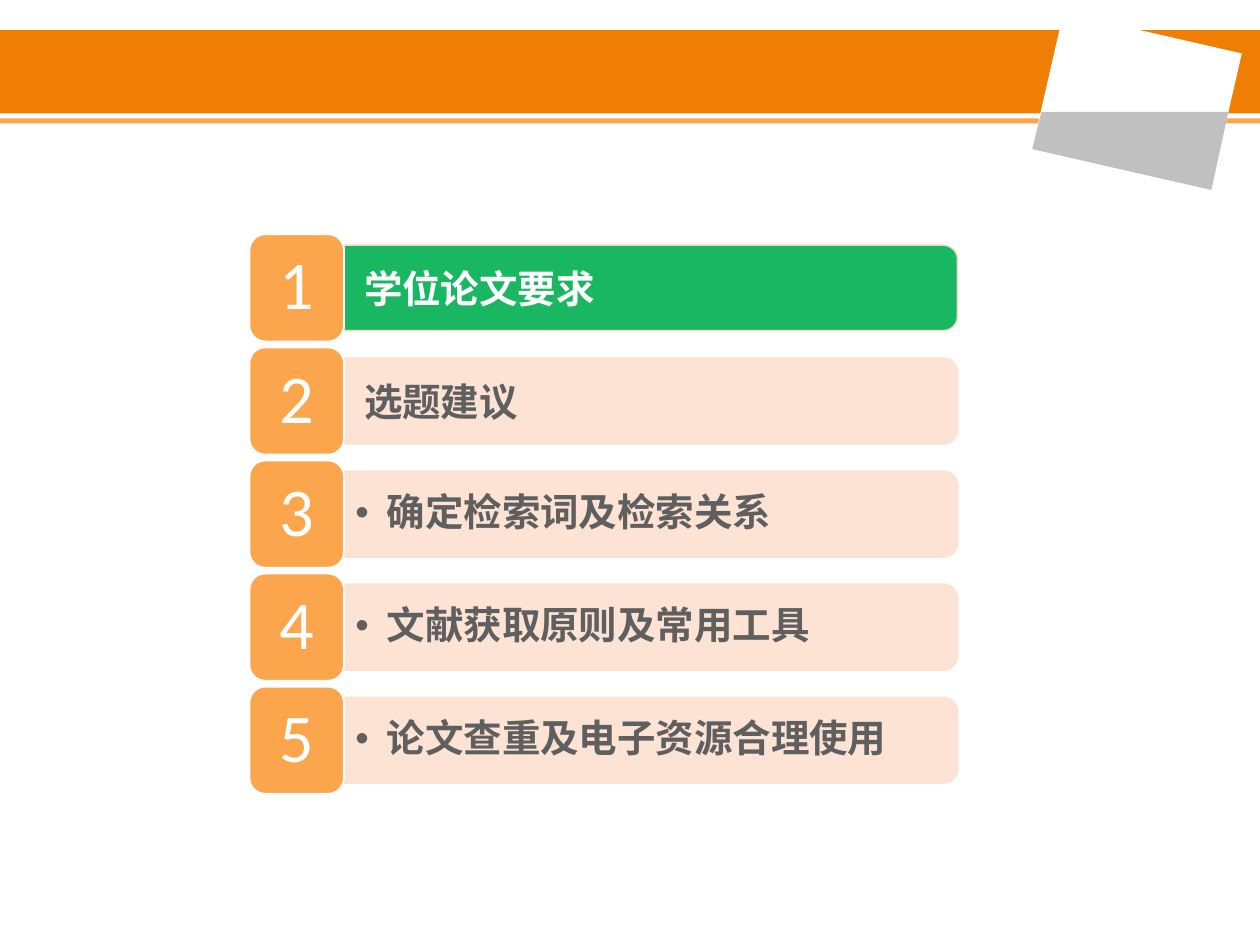
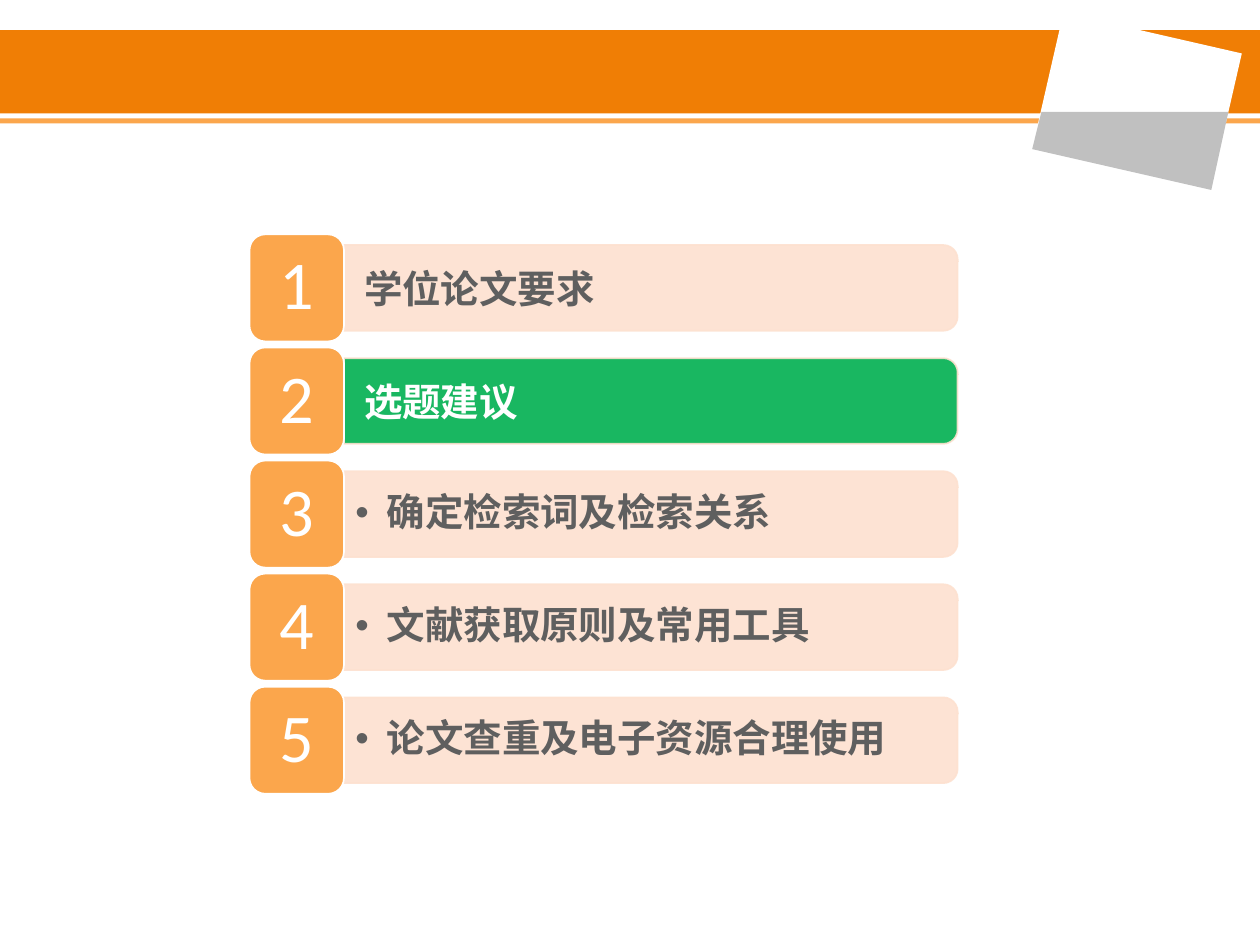
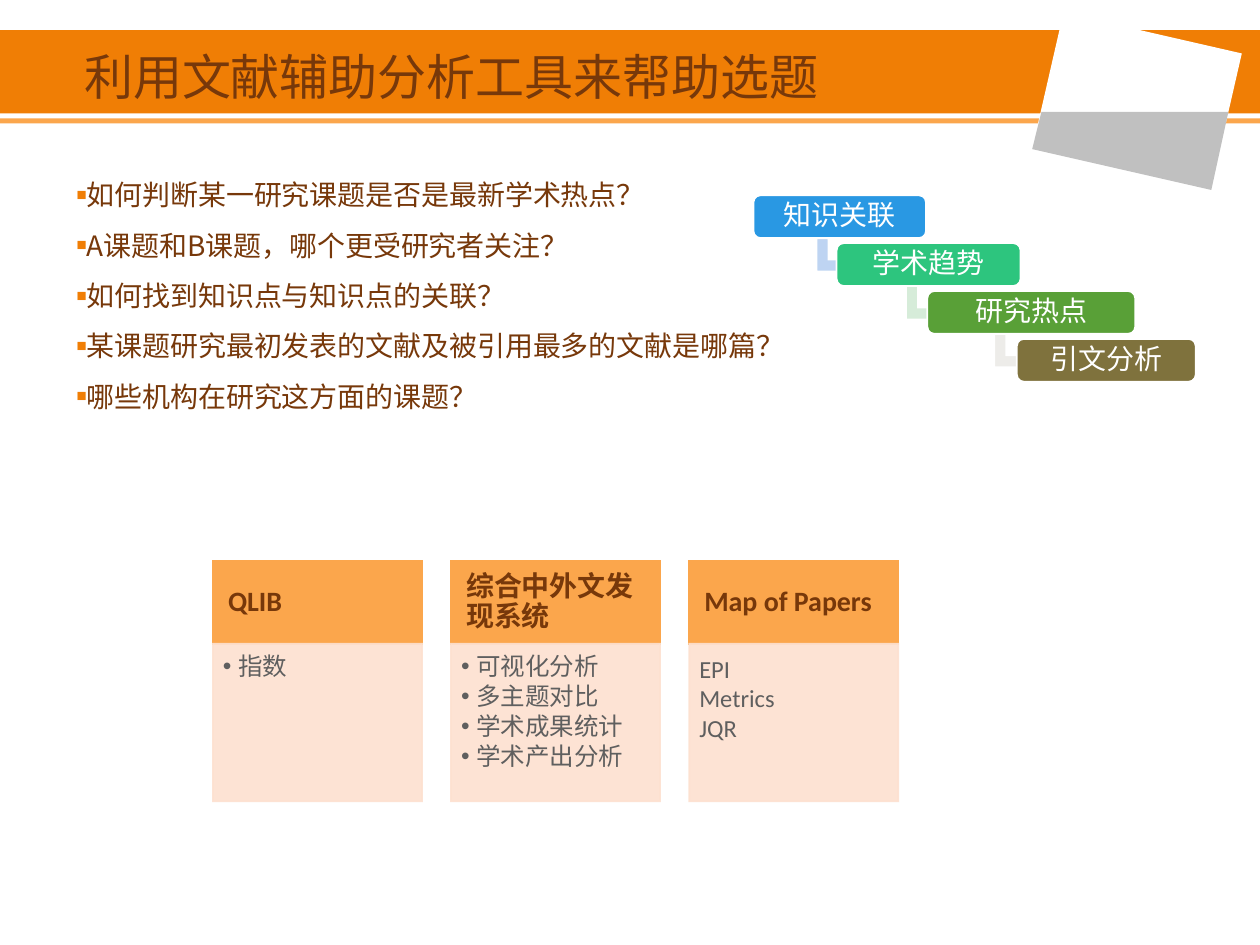
import pptx
import pptx.util
import pptx.dml.color
import pptx.enum.shapes
import pptx.enum.text
import pptx.oxml.ns
from lxml import etree

Inches = pptx.util.Inches
Pt = pptx.util.Pt
Shape = pptx.enum.shapes.MSO_SHAPE
Anchor = pptx.enum.text.MSO_ANCHOR
Align = pptx.enum.text.PP_ALIGN
qn = pptx.oxml.ns.qn

ORANGE = "F07E05"
LIGHT_ORANGE = "FBA64C"
PEACH = "FDE1D0"
GREEN = "00B050"
BROWN = "77380A"
GREY = "5F5F5F"
SILVER = "C0C0C0"
WHITE = "FFFFFF"
SANS = "Calibri"
CJK = "Noto Sans CJK SC"
SERIF = "Times New Roman"

TOPICS = ["学位论文要求", "选题建议", "确定检索词及检索关系",
          "文献获取原则及常用工具", "论文查重及电子资源合理使用"]
QUESTIONS = ["如何判断某一研究课题是否是最新学术热点？",
             "A课题和B课题，哪个更受研究者关注？",
             "如何找到知识点与知识点的关联？",
             "某课题研究最初发表的文献及被引用最多的文献是哪篇？",
             "哪些机构在研究这方面的课题？"]
STEPS = [("知识关联", 0, 1.37, "2998E3"), ("学术趋势", 0.66, 1.46, "2DC57E"),
         ("研究热点", 1.38, 1.65, "59A037"), ("引文分析", 2.09, 1.42, "7F723D")]
ELBOWS = [(0.52, "BED4F2"), (1.23, "D6ECD9"), (1.93, "EDECE9")]
TOOLS = [("QLIB", ["指数"], True),
         ("综合中外文发现系统", ["可视化分析", "多主题对比", "学术成果统计", "学术产出分析"], True),
         ("Map of Papers", ["EPI", "Metrics", "JQR"], False)]


def color(value):
    return pptx.dml.color.RGBColor.from_string(value)


def paint(shape, fill, line=None, line_width=1, opacity=100):
    shape.shadow.inherit = False
    shape.fill.solid()
    shape.fill.fore_color.rgb = color(fill)
    if line:
        shape.line.color.rgb = color(line)
        shape.line.width = Pt(line_width)
        etree.SubElement(shape._element.spPr.find(qn("a:ln")), qn("a:miter"), lim="800000")
    else:
        shape.line.fill.background()
    if opacity < 100:
        for tint in shape._element.spPr.iter(qn("a:srgbClr")):
            etree.SubElement(tint, qn("a:alpha"), val=str(opacity * 1000))


def add_shape(slide, kind, left, top, width, height, fill, line=None, line_width=1, opacity=100):
    shape = slide.shapes.add_shape(kind, Inches(left), Inches(top), Inches(width), Inches(height))
    paint(shape, fill, line, line_width, opacity)
    return shape


def add_text_box(slide, left, top, width, height):
    return slide.shapes.add_textbox(Inches(left), Inches(top), Inches(width), Inches(height))


def set_bullet(paragraph, character, bullet_color=None, percent=None):
    properties = paragraph._p.get_or_add_pPr()
    if bullet_color:
        holder = etree.SubElement(properties, qn("a:buClr"))
        etree.SubElement(holder, qn("a:srgbClr"), val=bullet_color)
    if percent:
        etree.SubElement(properties, qn("a:buSzPct"), val=str(percent * 1000))
    etree.SubElement(properties, qn("a:buFont"), typeface="Arial")
    etree.SubElement(properties, qn("a:buChar"), char=character)


def write(shape, lines, size, font, text_color, bold=False, align=Align.LEFT, anchor=Anchor.TOP,
          insets=(0.1, 0.05, 0.1, 0.05), spacing=0.9, after=0, margin=0, indent=0, bullet=None,
          asian_font=None):
    frame = shape.text_frame
    frame.word_wrap = True
    frame.vertical_anchor = anchor
    frame.margin_left, frame.margin_top, frame.margin_right, frame.margin_bottom = map(Inches, insets)
    for index, line in enumerate(lines):
        paragraph = frame.add_paragraph() if index else frame.paragraphs[0]
        if bullet:
            set_bullet(paragraph, *bullet)
        properties = paragraph._p.get_or_add_pPr()
        properties.set("marL", str(Inches(margin)))
        properties.set("indent", str(Inches(indent)))
        paragraph.alignment = align
        paragraph.line_spacing = spacing
        paragraph.space_after = Pt(after)
        run = paragraph.add_run()
        run.text = line
        run.font.size = Pt(size)
        run.font.bold = bold
        run.font.name = font
        run.font.color.rgb = color(text_color)
        run_properties = run._r.get_or_add_rPr()
        run_properties.set("lang", "zh-CN")
        etree.SubElement(run_properties, qn("a:ea"), typeface=asian_font or font)


def draw_header(slide, title=None):
    add_shape(slide, Shape.RECTANGLE, 0, 0.94, 10, 0.04, LIGHT_ORANGE)
    add_shape(slide, Shape.RECTANGLE, 0, 0.24, 10, 0.66, ORANGE)
    card = add_shape(slide, Shape.RECTANGLE, 8.33, 0.28, 1.39, 1.04, WHITE, WHITE, 4.5)
    card.rotation = 12.9
    corners = [(Inches(x), Inches(y)) for x, y in [(8.29, 0.92), (9.71, 0.92), (9.59, 1.47), (8.23, 1.16)]]
    builder = slide.shapes.build_freeform(*corners[0])
    builder.add_line_segments(corners[1:], close=True)
    paint(builder.convert_to_shape(), SILVER, SILVER, 4.5)
    if title:
        write(add_text_box(slide, 0.57, 0.23, 7.56, 0.66), [title], 28, SERIF, BROWN,
              anchor=Anchor.BOTTOM, asian_font=CJK)


def draw_agenda(slide, left, top, width, height, current):
    tile_width, tile_height, bar_height = 0.75, 0.85, 0.68
    bar_width = width - tile_width
    bar_left = left + tile_width
    pitch = (height - tile_height) / (len(TOPICS) - 1)
    for index, topic in enumerate(TOPICS):
        row_top = top + index * pitch
        middle = row_top + tile_height / 2
        active = index == current
        bar = add_shape(slide, Shape.ROUND_2_SAME_RECTANGLE, bar_left + (bar_width - bar_height) / 2,
                        middle - bar_width / 2, bar_height, bar_width,
                        GREEN if active else PEACH, PEACH, 1, 90)
        bar.rotation = 90
        bulleted = index > 1
        label = add_text_box(slide, bar_left, middle - 0.31, 4.83, 0.62)
        write(label, [topic], 22, CJK, WHITE if active else GREY, bold=True, anchor=Anchor.MIDDLE,
              insets=(0.09, 0.05, 0.09, 0.05), spacing=0.9 if bulleted else 1,
              margin=0.25 if bulleted else 0.07, indent=-0.25 if bulleted else 0,
              bullet=("•",) if bulleted else None)
        tile = add_shape(slide, Shape.ROUNDED_RECTANGLE, left, row_top, tile_width, tile_height,
                         LIGHT_ORANGE, WHITE)
        write(tile, [str(index + 1)], 39, SANS, WHITE, align=Align.CENTER, anchor=Anchor.MIDDLE,
              insets=(0.2, 0.11, 0.2, 0.11))


def draw_questions(slide, left, top, width, height):
    write(add_text_box(slide, left, top, width, height), QUESTIONS, 16, CJK, BROWN,
          spacing=1.5, indent=-0.39, bullet=("■", ORANGE, 60))


def draw_staircase(slide, left, top):
    step_height, pitch = 0.34, 0.38
    for index, (name, offset, width, fill) in enumerate(STEPS):
        step_top = top + index * pitch
        if index < len(ELBOWS):
            elbow_offset, elbow_fill = ELBOWS[index]
            elbow = add_shape(slide, Shape.BENT_UP_ARROW, left + elbow_offset, step_top + 0.32,
                              0.29, 0.33, elbow_fill, WHITE)
            elbow.rotation = 90
            for position, adjustment in enumerate((0.33, 0.25, 0.36)):
                elbow.adjustments[position] = adjustment
        step = add_shape(slide, Shape.ROUNDED_RECTANGLE, left + offset, step_top, width, step_height, fill, WHITE)
        write(step, [name], 16, SANS, WHITE, align=Align.CENTER, anchor=Anchor.MIDDLE, insets=(0.08, 0, 0.08, 0))


def draw_tools(slide, left, top):
    width, head_height, body_height, pitch = 1.66, 0.66, 1.25, 1.89
    for index, (name, features, bulleted) in enumerate(TOOLS):
        column_left = left + index * pitch
        head = add_shape(slide, Shape.RECTANGLE, column_left, top, width, head_height, LIGHT_ORANGE, LIGHT_ORANGE)
        write(head, [name], 16, SANS, BROWN, bold=True, anchor=Anchor.MIDDLE, insets=(0.12, 0.07, 0.12, 0.07))
        body = add_shape(slide, Shape.RECTANGLE, column_left, top + head_height, width, body_height,
                         PEACH, PEACH, 1, 90)
        write(body, features, 14, SANS, GREY, insets=(0.08, 0.08, 0.11, 0.12),
              spacing=0.9 if bulleted else 1, after=2 if bulleted else 0,
              margin=0.12 if bulleted else 0, indent=-0.12 if bulleted else 0,
              bullet=("•",) if bulleted else None)


def add_slide(presentation, title=None):
    slide = presentation.slides.add_slide(presentation.slide_layouts[6])
    draw_header(slide, title)
    return slide


def main():
    presentation = pptx.Presentation()
    presentation.slide_width = Inches(10)
    presentation.slide_height = Inches(7.5)
    for current in range(2):
        draw_agenda(add_slide(presentation), 1.98, 1.86, 5.62, 4.44, current)
    analysis = add_slide(presentation, "利用文献辅助分析工具来帮助选题")
    draw_questions(analysis, 0.51, 1.23, 8.76, 2.52)
    draw_staircase(analysis, 5.98, 1.55)
    draw_tools(analysis, 1.69, 4.45)
    presentation.save("out.pptx")


if __name__ == "__main__":
    main()
